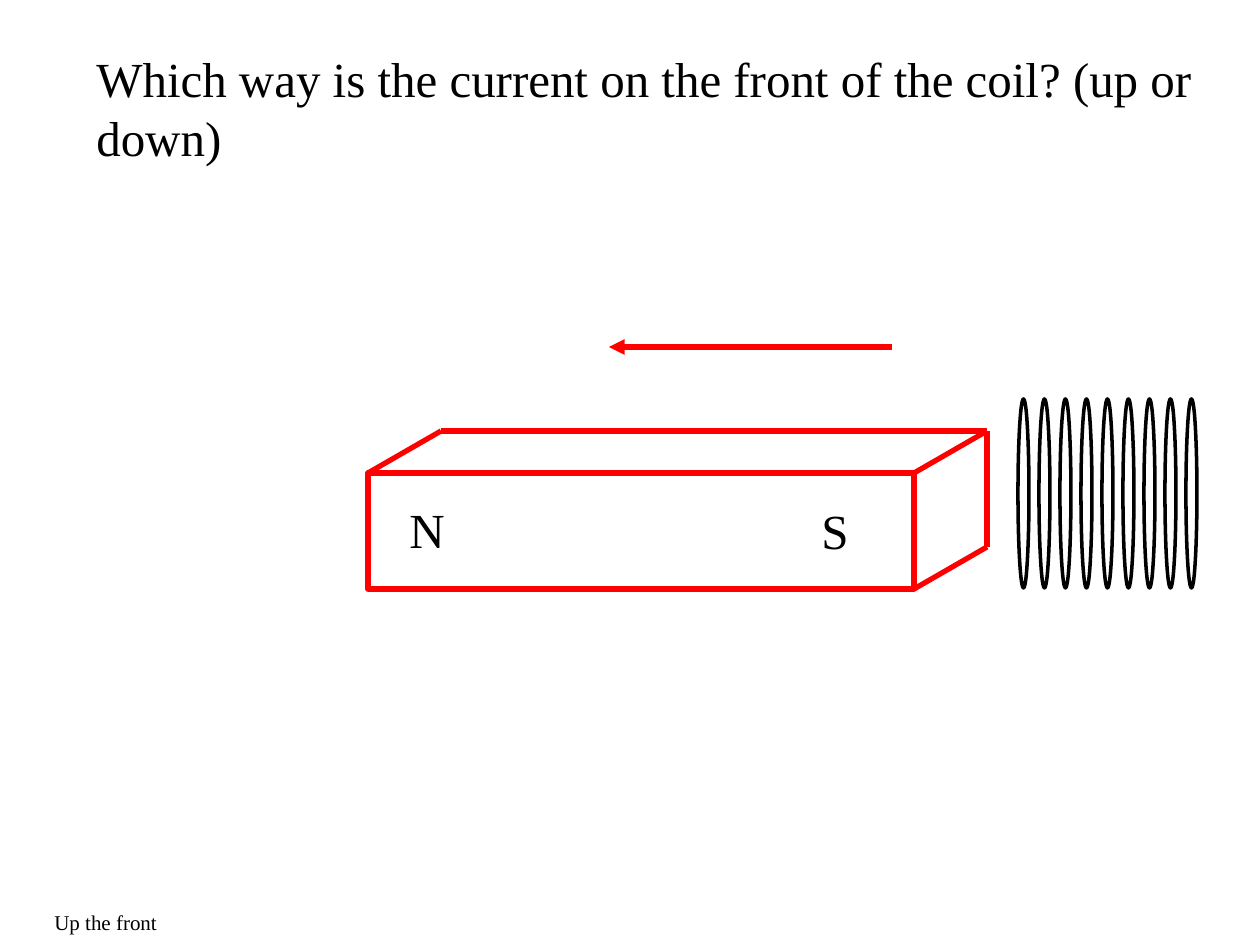
from lxml import etree
from pptx import Presentation
from pptx.dml.color import RGBColor
from pptx.enum.shapes import MSO_CONNECTOR, MSO_SHAPE
from pptx.enum.text import MSO_AUTO_SIZE
from pptx.oxml.ns import qn
from pptx.util import Emu, Pt

STRAIGHT = MSO_CONNECTOR.STRAIGHT
RECTANGLE = MSO_SHAPE.RECTANGLE
OVAL = MSO_SHAPE.OVAL
FIT_SHAPE = MSO_AUTO_SIZE.SHAPE_TO_FIT_TEXT
RED = "FF0000"
BLACK = "000000"
EMU_PER_PX = 914400 / 126


def px(*lengths):
    return [Emu(round(length * EMU_PER_PX)) for length in lengths]


def style_line(shape, color, width):
    shape.line.color.rgb = RGBColor.from_string(color)
    shape.line.width = Pt(width)


presentation = Presentation()
presentation.slide_width, presentation.slide_height = px(1260, 945)
slide = presentation.slides.add_slide(presentation.slide_layouts[6])
magnet = slide.shapes.add_group_shape()

# Bar magnet: front face, then the edges running back from it
left, top, right, bottom = 368, 473, 914, 589
depth_x, depth_y = 73, -42
back_left, back_right = left + depth_x, right + depth_x
back_top, back_bottom = top + depth_y, bottom + depth_y

front = magnet.shapes.add_shape(RECTANGLE, *px(left, top, right - left, bottom - top))
front.shadow.inherit = False
front.fill.background()
style_line(front, RED, 3)

magnet_edges = [
    (left, top, back_left, back_top),
    (back_left, back_top, back_right, back_top),
    (right, top, back_right, back_top),
    (back_right, back_top, back_right, back_bottom),
    (right, bottom, back_right, back_bottom),
]
lines = [magnet.shapes.add_connector(STRAIGHT, *px(*edge)) for edge in magnet_edges]

# Direction of motion
motion = slide.shapes.add_connector(STRAIGHT, *px(892, 347, 609, 347))
for line in lines + [motion]:
    style_line(line, RED, 3)
    etree.SubElement(line._element.spPr, qn("a:effectLst"))
etree.SubElement(motion.line._get_or_add_ln(), qn("a:tailEnd"), type="triangle")

# Coil of evenly spaced turns
for turn in range(9):
    loop = slide.shapes.add_shape(OVAL, *px(1018 + 21 * turn, 399, 11, 189))
    loop.shadow.inherit = False
    loop.fill.background()
    style_line(loop, BLACK, 2)

# Question, pole labels and answer
texts = [
    (slide, "Which way is the current on the front of the coil? (up or down)",
     (84, 42, 1144, 130), 28, True),
    (magnet, "N", (397, 493, 60, 72), 28, False),
    (magnet, "S", (809, 494, 53, 72), 28, False),
    (slide, "Up the front", (42, 903, 129, 38), 12, False),
]
for parent, text, box, size, wrap in texts:
    text_frame = parent.shapes.add_textbox(*px(*box)).text_frame
    text_frame.word_wrap = wrap
    text_frame.auto_size = FIT_SHAPE
    run = text_frame.paragraphs[0].add_run()
    run.text = text
    run.font.name = "Times New Roman"
    run.font.size = Pt(size)
    run.font.color.rgb = RGBColor.from_string(BLACK)

presentation.save("out.pptx")
